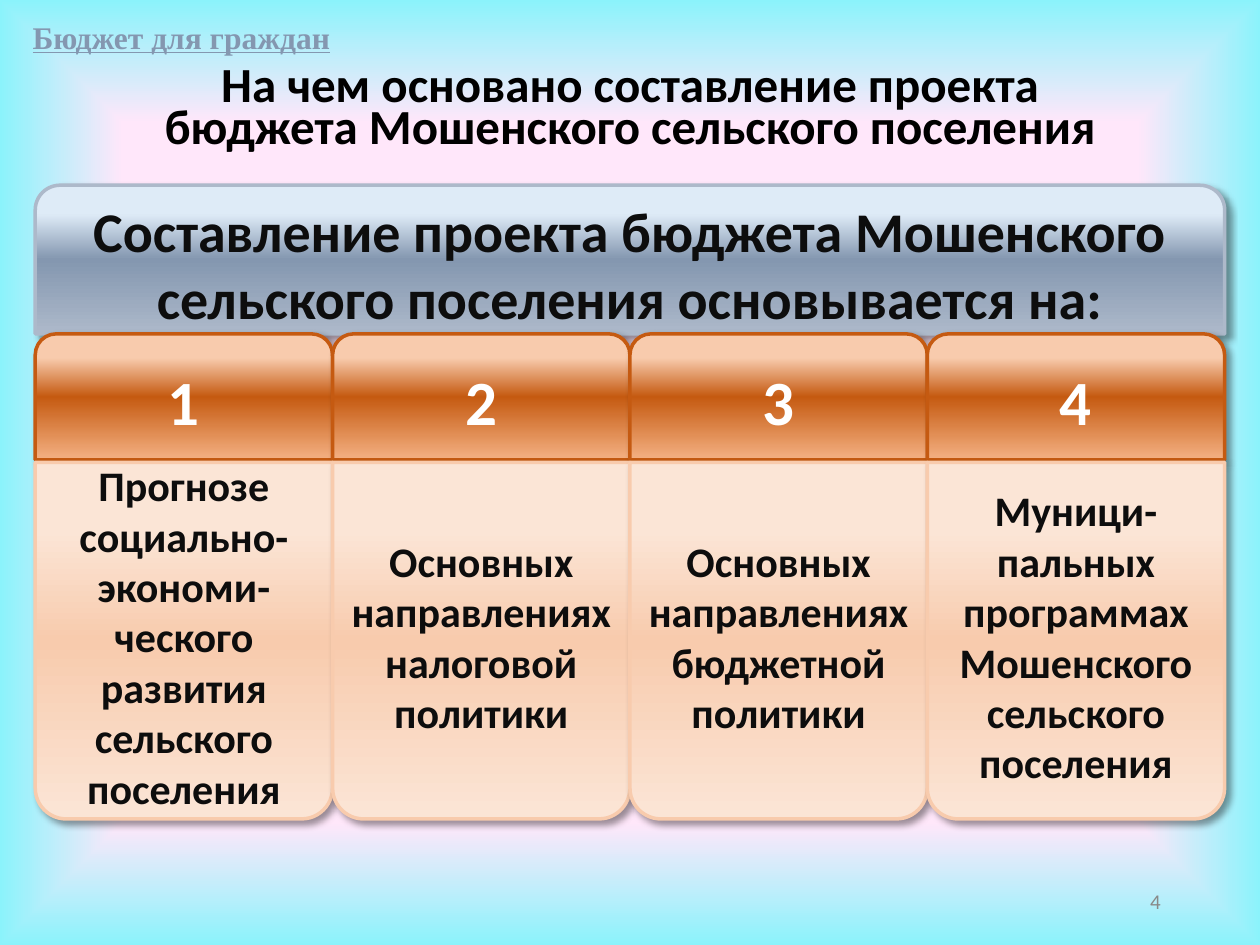
from lxml.etree import SubElement
from pptx import Presentation
from pptx.dml.color import RGBColor
from pptx.enum.shapes import MSO_SHAPE
from pptx.enum.text import MSO_ANCHOR, PP_ALIGN
from pptx.oxml import parse_xml
from pptx.oxml.ns import nsdecls, qn
from pptx.util import Inches, Pt

WIDTH, HEIGHT = 10, 7.5
LEFT, COLUMN = 0.28, 2.36
LINEAR = '<a:lin ang="5400000" scaled="0"/>'
CENTRED = '<a:path path="shape"><a:fillToRect l="50000" t="50000" r="50000" b="50000"/></a:path>'
BACKDROP = [(74, "FFE7FA"), (100, "8BF3FB")]
BANNER = {"stops": [(19, "DEEBF7"), (50, "8497B0"), (100, "ADB9CA")], "border": "ADB9CA"}
NUMBER = {"stops": [(19, "F8CBAD"), (50, "C55A11"), (100, "F4B183")], "border": "C55A11"}
BASIS = {"stops": [(19, "FBE5D6"), (50, "F8CBAD"), (100, "FBE5D6")], "border": "F8CBAD"}
BASES = [
    ["Прогнозе социально-экономи-", "ческого развития сельского поселения"],
    ["Основных направлениях налоговой политики"],
    ["Основных направлениях бюджетной политики"],
    ["Муници-", "пальных программах", "Мошенского сельского поселения"],
]


def colour(value):
    """Turn a hex string into a colour."""
    return RGBColor.from_string(value)


def paint_gradient(fill, holder, stops, direction):
    """Give a fill the listed gradient stops and direction."""
    fill.gradient()
    marks = "".join(
        f'<a:gs pos="{share * 1000}"><a:srgbClr val="{value}"/></a:gs>' for share, value in stops
    )
    old = next(holder.iter(qn("a:gradFill")))
    new = parse_xml(
        f'<a:gradFill {nsdecls("a")} rotWithShape="1"><a:gsLst>{marks}</a:gsLst>{direction}</a:gradFill>'
    )
    old.getparent().replace(old, new)


def cast_shadow(effects):
    """Add a soft black shadow falling to the lower right."""
    shadow = SubElement(
        effects, qn("a:outerShdw"), blurRad=str(Pt(4)), dist=str(Pt(3)),
        dir="2700000", algn="tl", rotWithShape="0",
    )
    black = SubElement(shadow, qn("a:srgbClr"), val="000000")
    SubElement(black, qn("a:alpha"), val="40000")


def write(frame, lines, ink, align=PP_ALIGN.CENTER, spacing=None, **formats):
    """Write one paragraph per line and return the runs."""
    spans = []
    for index, line in enumerate(lines):
        para = frame.paragraphs[0] if index == 0 else frame.add_paragraph()
        para.alignment, para.line_spacing = align, spacing
        span = para.add_run()
        span.text = line
        span.font.color.rgb = colour(ink)
        for name, value in ({"name": "Calibri", "bold": True} | formats).items():
            setattr(span.font, name, value)
        spans.append(span)
    return spans


def add_label(page, place, lines, ink, anchor=MSO_ANCHOR.TOP, wrap=True, **formats):
    """Add a text box and return its runs."""
    frame = page.shapes.add_textbox(*map(Inches, place)).text_frame
    frame.word_wrap, frame.vertical_anchor = wrap, anchor
    return write(frame, lines, ink, **formats)


def add_panel(page, place, look, lines, ink, size, rounding=None, inset=None):
    """Add a gradient panel with two rounded corners and centred text."""
    panel = page.shapes.add_shape(MSO_SHAPE.ROUND_2_SAME_RECTANGLE, *map(Inches, place))
    for index, value in enumerate(rounding or []):
        panel.adjustments[index] = value
    paint_gradient(panel.fill, panel.element, look["stops"], LINEAR)
    panel.line.color.rgb = colour(look["border"])
    panel.line.width = Pt(2)
    panel.shadow.inherit = False
    cast_shadow(panel.element.spPr.find(qn("a:effectLst")))
    frame = panel.text_frame
    frame.word_wrap, frame.vertical_anchor = True, MSO_ANCHOR.MIDDLE
    if inset is not None:
        for side in ("left", "top", "right", "bottom"):
            setattr(frame, f"margin_{side}", Inches(inset))
    write(frame, lines, ink, size=Pt(size))


def add_title(page):
    """Add the shadowed two-line heading."""
    spans = add_label(
        page, (0, 0.51, WIDTH, 1.02),
        ["На чем основано составление проекта", "бюджета Мошенского сельского поселения"],
        "000000", size=Pt(28), spacing=Pt(24),
    )
    for span in spans:
        effects = parse_xml(f'<a:effectLst {nsdecls("a")}/>')
        cast_shadow(effects)
        span.font.fill._xPr.find(qn("a:solidFill")).addnext(effects)


def main():
    """Build and save the slide."""
    deck = Presentation()
    deck.slide_width, deck.slide_height = Inches(WIDTH), Inches(HEIGHT)
    page = deck.slides.add_slide(deck.slide_layouts[6])
    paint_gradient(page.background.fill, page.element, BACKDROP, CENTRED)
    add_title(page)
    add_label(
        page, (7.06, 6.95, 2.25, 0.4), ["4"], "898989", MSO_ANCHOR.MIDDLE,
        align=PP_ALIGN.RIGHT, size=Pt(12), bold=False,
    )
    add_panel(
        page, (LEFT, 1.47, 4 * COLUMN, 1.18), BANNER,
        ["Составление проекта бюджета Мошенского сельского поселения основывается на:"],
        "0D0D0D", 32,
    )
    lefts = [LEFT + column * COLUMN for column in range(len(BASES))]
    for number, left in enumerate(lefts, 1):
        add_panel(page, (left, 2.65, COLUMN, 1), NUMBER, [str(number)], "FFFFFF", 36)
    for left, lines in zip(lefts, BASES):
        add_panel(page, (left, 3.67, COLUMN, 2.83), BASIS, lines, "0D0D0D", 24, (0, 0.104), 0)
    add_label(
        page, (0.16, 0.09, 2.59, 0.4), ["Бюджет для граждан"], "8497B0", wrap=False,
        align=PP_ALIGN.LEFT, name="Times New Roman", size=Pt(18), underline=True,
    )
    deck.save("out.pptx")


if __name__ == "__main__":
    main()
